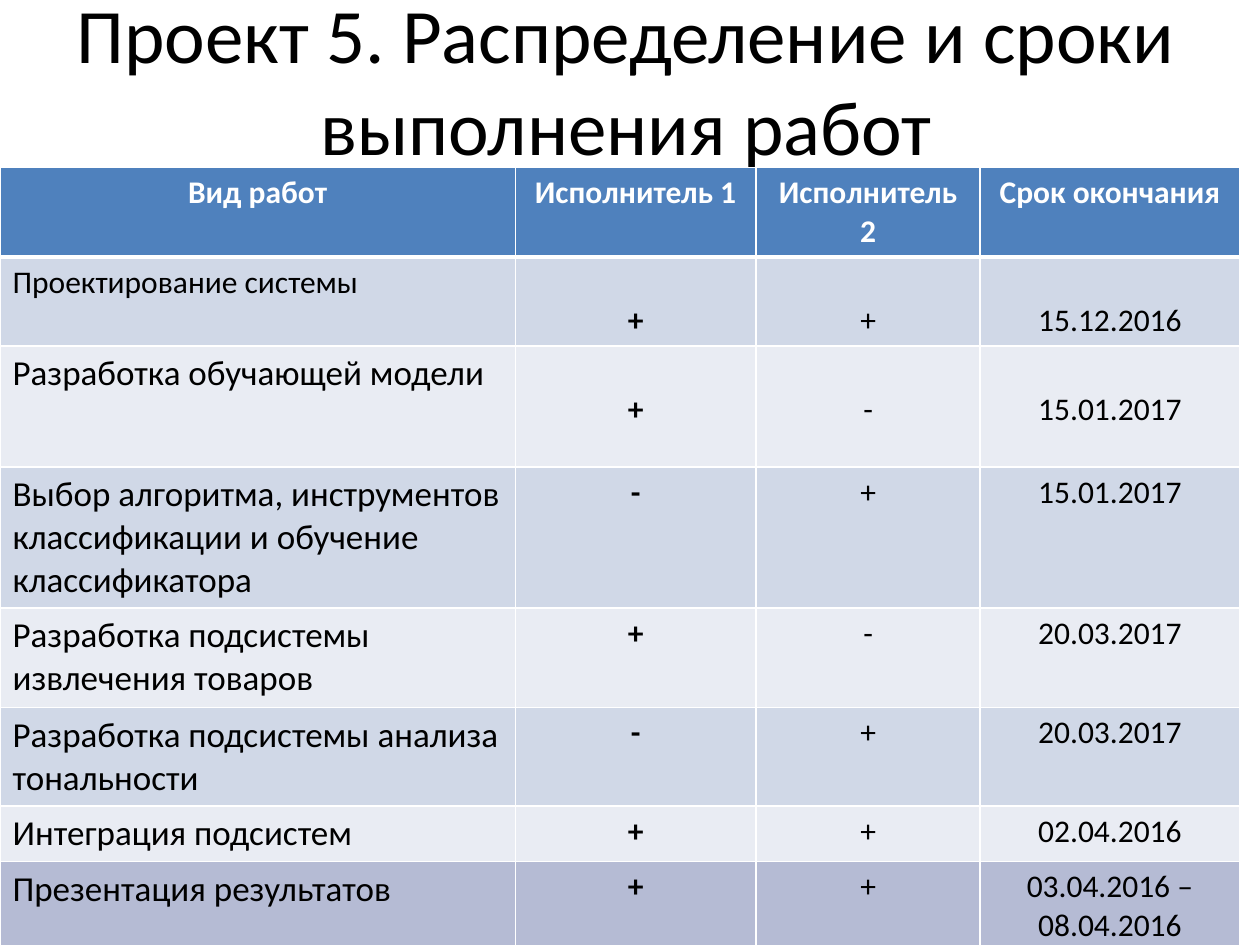
from lxml.etree import SubElement
from pptx import Presentation
from pptx.dml.color import RGBColor
from pptx.enum.text import MSO_ANCHOR as Anchor, MSO_AUTO_SIZE as Fit, PP_ALIGN as Align
from pptx.oxml.ns import qn
from pptx.util import Inches, Pt

WHITE = RGBColor(0xFF, 0xFF, 0xFF)
BLACK = RGBColor(0, 0, 0)
BLUE = RGBColor(0x4F, 0x81, 0xBD)
DARK = RGBColor(0xD0, 0xD8, 0xE7)
PALE = RGBColor(0xE9, 0xEC, 0xF3)
LILAC = RGBColor(0xB5, 0xBB, 0xD4)

WIDE, HIGH = Inches(10), Inches(7.5)
THIN, THICK = Pt(0.96), Pt(3)
INSET, DROP = Inches(0.05), Inches(0.35)

TITLE = "Проект 5. Распределение и сроки выполнения работ"
HEAD = ("Вид работ", "Исполнитель 1", "Исполнитель 2", "Срок окончания")
TASKS = [
    ("Проектирование системы", "+", "+", "15.12.2016"),
    ("Разработка обучающей модели", "+", "-", "15.01.2017"),
    ("Выбор алгоритма, инструментов классификации и обучение классификатора",
     "-", "+", "15.01.2017"),
    ("Разработка подсистемы извлечения товаров", "+", "-", "20.03.2017"),
    ("Разработка подсистемы анализа тональности", "-", "+", "20.03.2017"),
    ("Интеграция подсистем", "+", "+", "02.04.2016"),
    ("Презентация результатов", "+", "+", "03.04.2016 – 08.04.2016"),
]
COLS = (4.09, 1.91, 1.78, 2.06)
ROWS = (0.71, 0.69, 0.96, 1.12, 0.79, 0.78, 0.44, 0.68)
LAST = len(TASKS)
LOW_ROWS = (1, 2)  # rows whose marks and dates sit one line lower


def style(par, size, color, bold, align):
    par.alignment = align
    font = par.font
    font.name, font.size, font.bold = "Calibri", Pt(size), bold
    font.color.rgb = color


def edge(cell, row):
    """Draw white borders, thick between the head and the first task."""
    props = cell._tc.get_or_add_tcPr()
    thick = {0: "lnB", 1: "lnT"}.get(row)
    for tag in ("lnL", "lnR", "lnT", "lnB"):
        width = THICK if tag == thick else THIN
        line = SubElement(props, qn(f"a:{tag}"), w=str(int(width)))
        fill = SubElement(line, qn("a:solidFill"))
        SubElement(fill, qn("a:srgbClr"), val=str(WHITE))


def shade(row):
    if row == 0:
        return BLUE
    if row == LAST:
        return LILAC
    return DARK if row % 2 else PALE


def fill_cell(cell, row, col, text):
    edge(cell, row)
    cell.fill.solid()
    cell.fill.fore_color.rgb = shade(row)
    cell.vertical_anchor = Anchor.TOP
    cell.margin_top = DROP if row in LOW_ROWS and col else INSET
    cell.text = text
    size = 20 if col == 0 and row > 1 else 18
    style(cell.text_frame.paragraphs[0], size,
          BLACK if row else WHITE,
          row == 0 or col == 1,
          Align.LEFT if row and col == 0 else Align.CENTER)


def add_title(slide, left, top, width, height):
    title = slide.shapes.title
    title.left, title.top, title.width, title.height = left, top, width, height
    frame = title.text_frame
    frame.text = TITLE
    frame.word_wrap = True
    frame.auto_size = Fit.NONE
    frame.vertical_anchor = Anchor.MIDDLE
    style(frame.paragraphs[0], 44, BLACK, False, Align.CENTER)


def add_plan(slide, left, top, width, height):
    """Place the work plan, sharing the box out by COLS and ROWS."""
    table = slide.shapes.add_table(
        len(ROWS), len(COLS), left, top, width, height).table
    for col, part in zip(table.columns, COLS):
        col.width = int(width * part / sum(COLS))
    for row, part in zip(table.rows, ROWS):
        row.height = int(height * part / sum(ROWS))
    for r, texts in enumerate([HEAD, *TASKS]):
        for c, text in enumerate(texts):
            fill_cell(table.cell(r, c), r, c, text)


def main():
    deck = Presentation()
    deck.slide_width, deck.slide_height = WIDE, HIGH
    slide = deck.slides.add_slide(deck.slide_layouts[5])
    add_title(slide, Inches(0.47), 0, int(WIDE * 0.9), HIGH // 6)
    top = Inches(1.33)
    add_plan(slide, 0, top, Inches(sum(COLS)), HIGH - top)
    deck.save("out.pptx")


if __name__ == "__main__":
    main()
